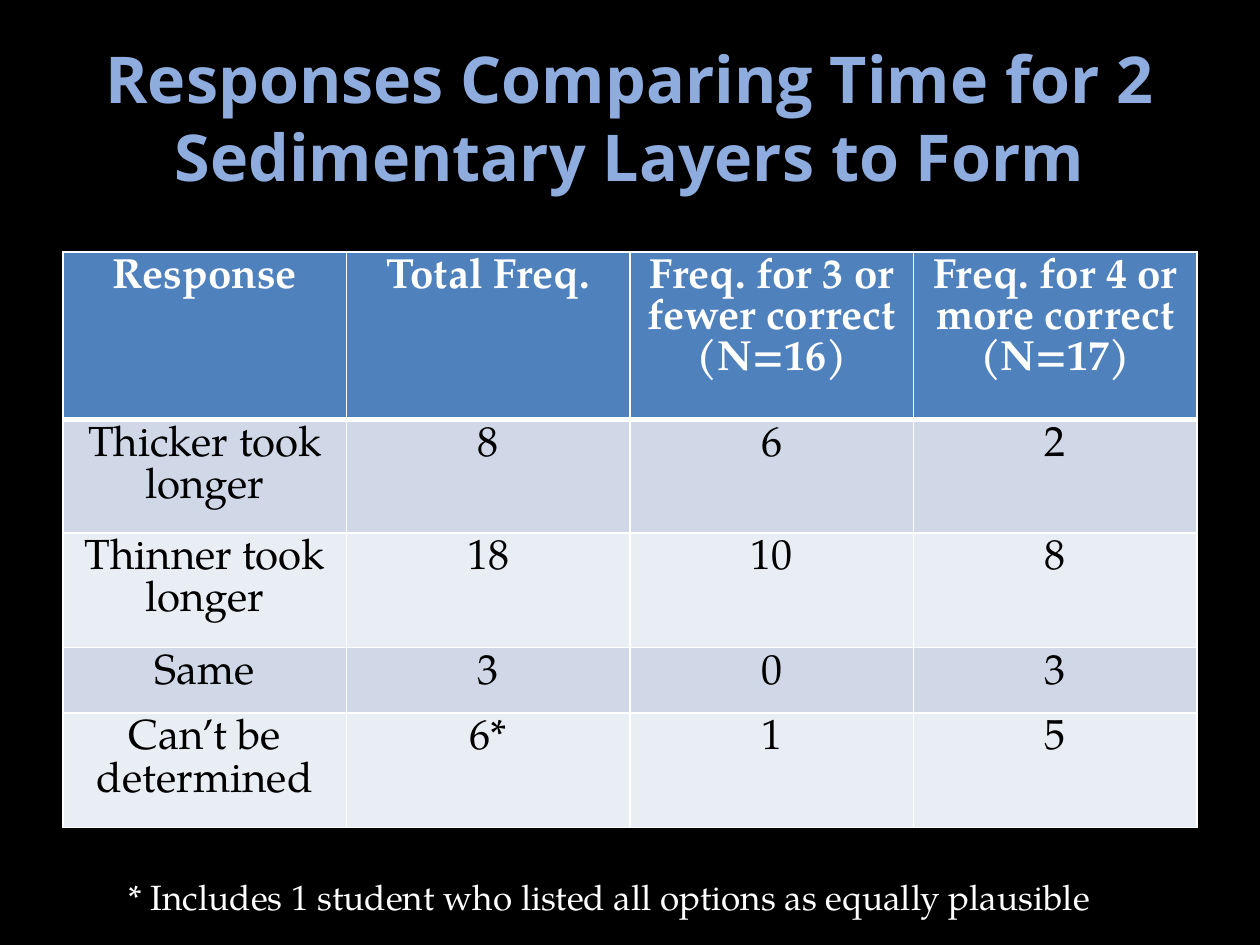
import dataclasses

import lxml.etree
import pptx
import pptx.dml.color
import pptx.enum.text
import pptx.oxml.ns
import pptx.util

Inches = pptx.util.Inches
Pt = pptx.util.Pt
ALIGN = pptx.enum.text.PP_ALIGN
BODY_FONT = "TeX Gyre Pagella"
WHITE = "FFFFFF"


@dataclasses.dataclass(frozen=True)
class TableRow:
    height: float
    fill: str
    entries: tuple[str, ...]
    color: str = "000000"
    bold: bool = False
    top_border: float = 1
    bottom_border: float = 1


RESPONSES = (
    TableRow(1.33, "4F81BD",
             ("Response", "Total Freq.", "Freq. for 3 or fewer correct (N=16)",
              "Freq. for 4 or more correct (N=17)"),
             color=WHITE, bold=True, bottom_border=3),
    TableRow(0.9, "D0D8E8", ("Thicker took longer", "8", "6", "2"), top_border=3),
    TableRow(0.91, "E9EDF4", ("Thinner took longer", "18", "10", "8")),
    TableRow(0.52, "D0D8E8", ("Same", "3", "0", "3")),
    TableRow(0.91, "E9EDF4", ("Can’t be determined", "6*", "1", "5")),
)


def set_color(target, value: str) -> None:
    target.rgb = pptx.dml.color.RGBColor.from_string(value)


def fill_solid(fill, value: str) -> None:
    fill.solid()
    set_color(fill.fore_color, value)


def write_text(frame, text: str, *, size: float, color: str, font: str = BODY_FONT,
               bold: bool = False, align=ALIGN.CENTER) -> None:
    paragraph = frame.paragraphs[0]
    paragraph.alignment = align
    run = paragraph.add_run()
    run.text = text
    run.font.name = font
    run.font.size = Pt(size)
    run.font.bold = bold
    set_color(run.font.color, color)


def add_border(cell, side: str, width: float) -> None:
    qn = pptx.oxml.ns.qn
    properties = cell._tc.get_or_add_tcPr()
    line = lxml.etree.SubElement(properties, qn(f"a:ln{side}"), w=str(Pt(width)))
    solid = lxml.etree.SubElement(line, qn("a:solidFill"))
    lxml.etree.SubElement(solid, qn("a:srgbClr"), val=WHITE)


def add_title(slide, text: str) -> None:
    title = slide.shapes.title
    title.left, title.top = Inches(0.5), Inches(0.3)
    title.width, title.height = Inches(9), Inches(1.25)
    frame = title.text_frame
    frame.word_wrap = True
    frame.auto_size = pptx.enum.text.MSO_AUTO_SIZE.NONE
    frame.vertical_anchor = pptx.enum.text.MSO_ANCHOR.MIDDLE
    write_text(frame, text, size=36.9, color="8FACDE", font="Open Sans", bold=True)


def add_responses(slide, rows: tuple[TableRow, ...]) -> None:
    column_count = len(rows[0].entries)
    total_height = sum(row.height for row in rows)
    table = slide.shapes.add_table(len(rows), column_count, Inches(0.5), Inches(2),
                                   Inches(9), Inches(total_height)).table
    for column in table.columns:
        column.width = Inches(9 / column_count)
    for row_index, row in enumerate(rows):
        table.rows[row_index].height = Inches(row.height)
        borders = {"L": 1, "R": 1, "T": row.top_border, "B": row.bottom_border}
        for column_index, entry in enumerate(row.entries):
            cell = table.cell(row_index, column_index)
            for side, width in borders.items():
                add_border(cell, side, width)
            fill_solid(cell.fill, row.fill)
            write_text(cell.text_frame, entry, size=24, color=row.color, bold=row.bold)


def add_footnote(slide, text: str) -> None:
    footnote = slide.shapes.add_textbox(Inches(0.92), Inches(6.9),
                                        Inches(8.04), Inches(0.44))
    footnote.text_frame.word_wrap = False
    write_text(footnote.text_frame, text, size=20, color=WHITE, align=ALIGN.LEFT)


def main() -> None:
    presentation = pptx.Presentation()
    presentation.slide_width = Inches(10)
    presentation.slide_height = Inches(7.5)
    slide = presentation.slides.add_slide(
        presentation.slide_layouts.get_by_name("Title Only"))
    fill_solid(slide.background.fill, "000000")
    add_title(slide, "Responses Comparing Time for 2 Sedimentary Layers to Form")
    add_responses(slide, RESPONSES)
    add_footnote(slide, "* Includes 1 student who listed all options as equally plausible")
    presentation.save("out.pptx")


if __name__ == "__main__":
    main()
